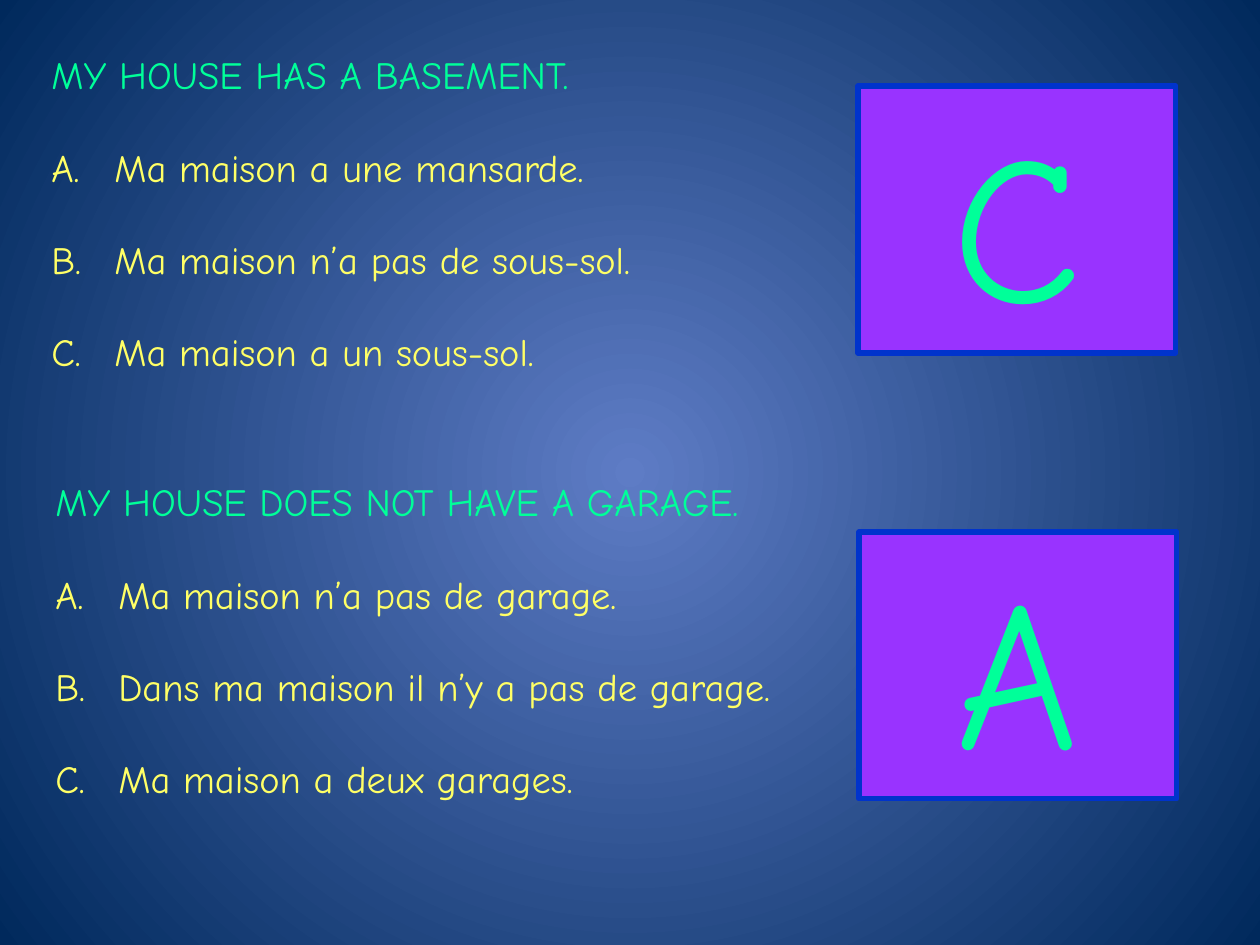
from lxml import etree
from pptx import Presentation
from pptx.dml.color import RGBColor
from pptx.enum.shapes import MSO_SHAPE
from pptx.enum.text import MSO_ANCHOR, MSO_AUTO_SIZE, PP_ALIGN
from pptx.oxml.ns import qn
from pptx.util import Pt

PX = 914400 // 126
RECTANGLE = MSO_SHAPE.RECTANGLE
TOP, MIDDLE = MSO_ANCHOR.TOP, MSO_ANCHOR.MIDDLE
GROW = MSO_AUTO_SIZE.SHAPE_TO_FIT_TEXT
CENTER = PP_ALIGN.CENTER

FONT = "Comic Neue"
COLORS = {
    "glow": "5E7CC5",
    "edge": "00295C",
    "prompt": "00FF99",
    "choice": "FFFF66",
    "card": "9933FF",
    "border": "0033CC",
}
QUESTION_SIZE, ANSWER_SIZE = 22, 120
LINE_GAP = 26.4  # one empty line of question text, in points
CHOICE_INDENT = 63

QUESTIONS = [
    {
        "prompt": "MY HOUSE HAS A BASEMENT.",
        "choices": [
            "Ma maison a une mansarde.",
            "Ma maison n’a pas de sous-sol.",
            "Ma maison a un sous-sol.",
        ],
        "question_box": (39, 45, 820, 386),
        "answer": "C",
        "answer_box": (858, 86, 318, 267),
    },
    {
        "prompt": "MY HOUSE DOES NOT HAVE A GARAGE.",
        "choices": [
            "Ma maison n’a pas de garage.",
            "Dans ma maison il n’y a pas de garage.",
            "Ma maison a deux garages.",
        ],
        "question_box": (43, 472, 925, 386),
        "answer": "A",
        "answer_box": (859, 532, 318, 267),
    },
]


def color(name):
    return RGBColor.from_string(COLORS[name])


def to_emu(box):
    return [length * PX for length in box]


def set_values(target, values):
    for name, value in values.items():
        setattr(target, name, value)


def write(paragraph, text, size, color_name):
    run = paragraph.add_run()
    run.text = text
    set_values(run.font, {"name": FONT, "size": Pt(size)})
    run.font.color.rgb = color(color_name)


def number_with_letter(paragraph):
    """Give the paragraph a hanging A., B., C. number."""
    properties = paragraph._p.get_or_add_pPr()
    properties.set("marL", str(CHOICE_INDENT * PX))
    properties.set("indent", str(-CHOICE_INDENT * PX))
    etree.SubElement(properties, qn("a:buFont"), typeface="+mj-lt")
    etree.SubElement(properties, qn("a:buAutoNum"), type="alphaUcPeriod")


def add_background(slide):
    """Fill the slide with a gradient that spreads in circles from its centre."""
    fill = slide.background.fill
    fill.gradient()
    for stop, name in zip(fill.gradient_stops, ("glow", "edge")):
        stop.color.rgb = color(name)
    gradient = slide.element.find(".//" + qn("a:gradFill"))
    gradient.remove(gradient.find(qn("a:lin")))
    circle = etree.SubElement(gradient, qn("a:path"), {"path": "circle"})
    etree.SubElement(circle, qn("a:fillToRect"), dict.fromkeys("ltrb", "50000"))


def add_question(slide, box, prompt, choices):
    frame = slide.shapes.add_textbox(*to_emu(box)).text_frame
    set_values(frame, {"word_wrap": True, "auto_size": GROW, "vertical_anchor": TOP})
    write(frame.paragraphs[0], prompt, QUESTION_SIZE, "prompt")
    for choice in choices:
        paragraph = frame.add_paragraph()
        paragraph.space_before = Pt(LINE_GAP)
        number_with_letter(paragraph)
        write(paragraph, choice, QUESTION_SIZE, "choice")


def add_answer(slide, box, letter):
    card = slide.shapes.add_shape(RECTANGLE, *to_emu(box))
    card.shadow.inherit = False
    card.fill.solid()
    card.fill.fore_color.rgb = color("card")
    card.line.color.rgb = color("border")
    card.line.width = Pt(3)
    frame = card.text_frame
    set_values(frame, {"word_wrap": True, "auto_size": GROW, "vertical_anchor": MIDDLE})
    paragraph = frame.paragraphs[0]
    paragraph.alignment = CENTER
    write(paragraph, letter, ANSWER_SIZE, "prompt")


def main():
    presentation = Presentation()
    set_values(presentation, {"slide_width": 1260 * PX, "slide_height": 945 * PX})
    slide = presentation.slides.add_slide(presentation.slide_layouts[6])
    add_background(slide)
    for question in QUESTIONS:
        add_question(slide, question["question_box"], question["prompt"], question["choices"])
        add_answer(slide, question["answer_box"], question["answer"])
    presentation.save("out.pptx")


if __name__ == "__main__":
    main()
